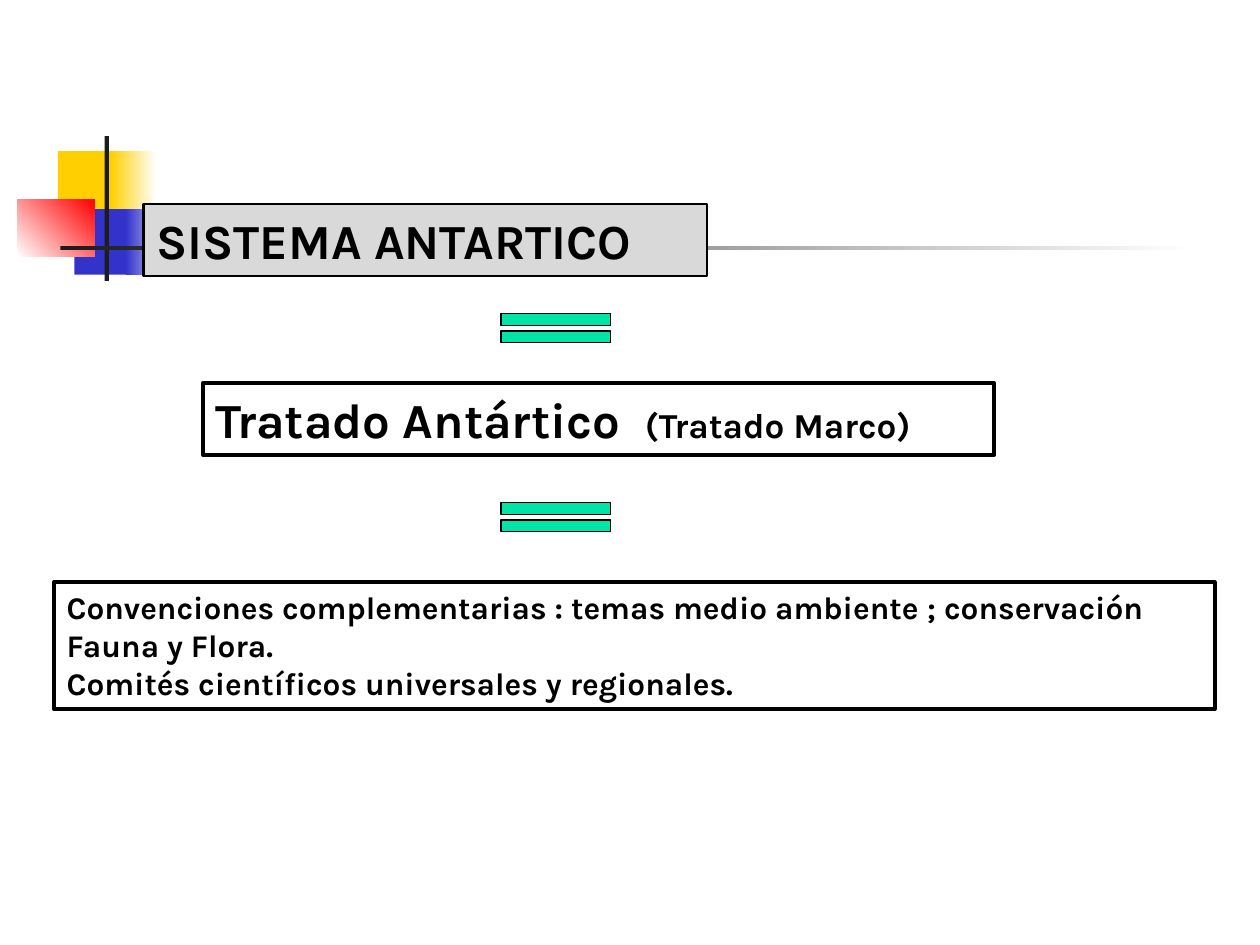
from dataclasses import dataclass

import pptx
import pptx.dml.color
import pptx.enum.shapes
import pptx.enum.text
import pptx.util

# The slide is a grid of 100 columns by 75 rows of square cells
COLUMNS, ROWS = 100, 75
CELL = pptx.util.Inches(0.1)
FONT = "Karla"
BLACK, WHITE, GREY = "000000", "FFFFFF", "D9D9D9"
YELLOW, BLUE, RED, CHARCOAL, GREEN = "FFCF01", "3333CC", "FF0000", "1C1C1C", "00E4A8"
RECTANGLE = pptx.enum.shapes.MSO_SHAPE.RECTANGLE
EQUALS = pptx.enum.shapes.MSO_SHAPE.MATH_EQUAL


@dataclass(frozen=True)
class Area:
    column: float
    row: float
    columns: float
    rows: float

    def emu(self) -> list[int]:
        return [round(cells * CELL) for cells in (self.column, self.row, self.columns, self.rows)]


@dataclass(frozen=True)
class Ornament:
    area: Area
    colors: tuple[str, ...]  # one colour is solid, two make a gradient
    angle: int = 0  # counter-clockwise


@dataclass(frozen=True)
class Span:
    text: str
    size: int


@dataclass(frozen=True)
class TextBox:
    area: Area
    paragraphs: tuple[tuple[Span, ...], ...]
    line_width: float = 2.25


ORNAMENTS = (
    Ornament(Area(4.6, 12, 4.8, 5.2), (YELLOW,)),
    Ornament(Area(8.8, 12, 3.6, 5.2), (YELLOW, WHITE)),
    Ornament(Area(5.9, 16.6, 4.6, 5.2), (BLUE,)),
    Ornament(Area(10, 16.6, 4, 5.2), (BLUE, WHITE)),
    Ornament(Area(1.4, 15.8, 6.1, 4.6), (WHITE, RED), 45),
    Ornament(Area(8.3, 10.8, 0.35, 11.5), (CHARCOAL,)),
    Ornament(Area(4.8, 19.5, 90, 0.35), (CHARCOAL, WHITE)),
)
TITLE = TextBox(Area(11.4, 16.2, 44.7, 5.7), ((Span("SISTEMA ANTARTICO", 28),),), 1.5)
TREATY = TextBox(
    Area(16.1, 30.4, 62.8, 5.7),
    ((Span("Tratado Antártico  ", 28), Span("(Tratado Marco)", 20)),),
)
CONVENTIONS = TextBox(
    Area(4.3, 46.2, 92.1, 10.1),
    (
        (Span("Convenciones complementarias : temas medio ambiente ; "
              "conservación Fauna y Flora.", 18),),
        (Span("Comités científicos universales y regionales.", 18),),
    ),
)
EQUALS_ROWS = (24.1, 39.1)


def color(value: str) -> pptx.dml.color.RGBColor:
    return pptx.dml.color.RGBColor.from_string(value)


def paint(shape, colors: tuple[str, ...], angle: int = 0) -> None:
    if len(colors) == 1:
        shape.fill.solid()
        shape.fill.fore_color.rgb = color(colors[0])
        return
    shape.fill.gradient()
    shape.fill.gradient_angle = angle
    for stop, value in zip(shape.fill.gradient_stops, colors):
        stop.color.rgb = color(value)


def outline(shape, width: float) -> None:
    shape.line.color.rgb = color(BLACK)
    shape.line.width = pptx.util.Pt(width)


def add_shape(page, kind, area: Area, colors: tuple[str, ...], angle: int = 0):
    shape = page.shapes.add_shape(kind, *area.emu())
    shape.shadow.inherit = False
    shape.line.fill.background()
    paint(shape, colors, angle)
    return shape


def write_box(box, content: TextBox) -> None:
    box.left, box.top, box.width, box.height = content.area.emu()
    outline(box, content.line_width)
    frame = box.text_frame
    frame.word_wrap = True
    frame.auto_size = pptx.enum.text.MSO_AUTO_SIZE.NONE
    frame.vertical_anchor = pptx.enum.text.MSO_ANCHOR.TOP
    for index, spans in enumerate(content.paragraphs):
        para = frame.add_paragraph() if index else frame.paragraphs[0]
        para.alignment = pptx.enum.text.PP_ALIGN.LEFT
        for part in spans:
            span = para.add_run()
            span.text = part.text
            span.font.name = FONT
            span.font.size = pptx.util.Pt(part.size)
            span.font.bold = True
            span.font.color.rgb = color(BLACK)


def main() -> None:
    deck = pptx.Presentation()
    deck.slide_width, deck.slide_height = COLUMNS * CELL, ROWS * CELL
    page = deck.slides.add_slide(deck.slide_layouts[5])

    # Coloured squares and crossing bars
    for ornament in ORNAMENTS:
        add_shape(page, RECTANGLE, ornament.area, ornament.colors, ornament.angle)

    # Title, brought in front of the ornaments
    title = page.shapes.title
    page.shapes._spTree.append(title._element)
    paint(title, (GREY,))
    write_box(title, TITLE)

    # Treaty and conventions
    for content in (TREATY, CONVENTIONS):
        write_box(page.shapes.add_textbox(*content.area.emu()), content)

    # Equals signs between the boxes
    for row in EQUALS_ROWS:
        sign = add_shape(page, EQUALS, Area(38.2, row, 11.8, 3.9), (GREEN,))
        outline(sign, 0.75)

    deck.save("out.pptx")


if __name__ == "__main__":
    main()
